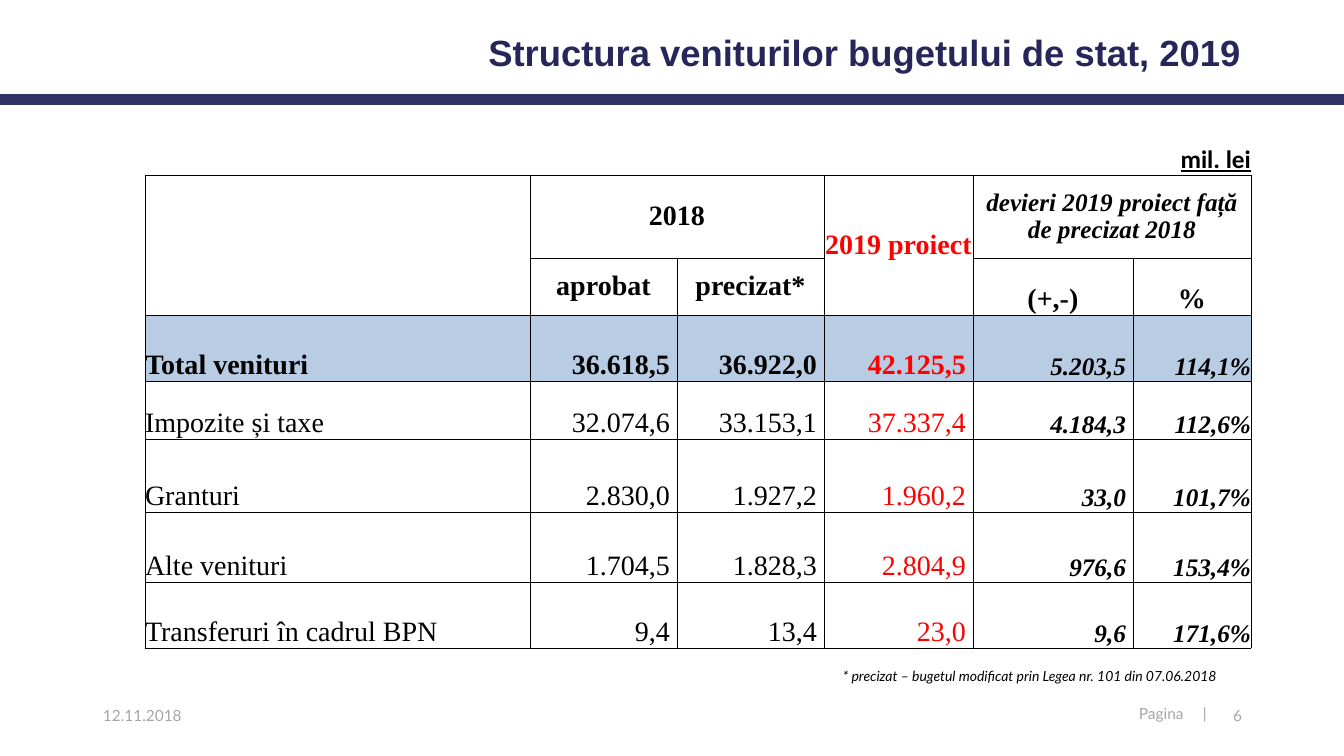
import pptx
import pptx.util
import pptx.dml.color
import pptx.enum.text
import pptx.enum.shapes
import pptx.oxml.ns
from lxml import etree

RGBColor = pptx.dml.color.RGBColor
ALIGN = pptx.enum.text.PP_ALIGN
ANCHOR = pptx.enum.text.MSO_ANCHOR

NAVY = RGBColor(0x33, 0x33, 0x66)
TITLE = RGBColor(0x26, 0x26, 0x5A)
GRAY = RGBColor(0xA6, 0xA6, 0xA6)
BLACK = RGBColor(0, 0, 0)
RED = RGBColor(0xFF, 0, 0)
BLUE = RGBColor(0xB8, 0xCC, 0xE4)

SCALE = 914400 / 100.8
COLS = [385, 147, 147, 149, 160, 118]
ROWS = [40, 83, 57, 66, 58, 73, 70, 66]
SERIF = {"name": "Times New Roman", "size": 20, "color": BLACK}
HEAD = SERIF | {"bold": True}
DEVIATION = HEAD | {"size": 18, "italic": True}
FOOTER = {"name": "Lato", "size": 11, "color": GRAY}

HEADERS = [
    (0, 5, "mil. lei", HEAD | {"name": "Calibri", "size": 18, "underline": True},
     ALIGN.RIGHT, ANCHOR.BOTTOM),
    (1, 1, "2018", HEAD, ALIGN.CENTER, ANCHOR.MIDDLE),
    (1, 3, "2019 proiect", HEAD | {"color": RED}, ALIGN.CENTER, ANCHOR.MIDDLE),
    (1, 4, "devieri 2019 proiect față de precizat 2018", DEVIATION,
     ALIGN.CENTER, ANCHOR.MIDDLE),
    (2, 1, "aprobat", HEAD, ALIGN.CENTER, ANCHOR.MIDDLE),
    (2, 2, "precizat*", HEAD, ALIGN.CENTER, ANCHOR.MIDDLE),
    (2, 4, "(+,-)", HEAD, ALIGN.CENTER, ANCHOR.BOTTOM),
    (2, 5, "%", HEAD, ALIGN.CENTER, ANCHOR.BOTTOM),
]
REVENUES = [
    ("Total venituri", "36.618,5", "36.922,0", "42.125,5", "5.203,5", "114,1%"),
    ("Impozite și taxe", "32.074,6", "33.153,1", "37.337,4", "4.184,3", "112,6%"),
    ("Granturi", "2.830,0", "1.927,2", "1.960,2", "33,0", "101,7%"),
    ("Alte venituri", "1.704,5", "1.828,3", "2.804,9", "976,6", "153,4%"),
    ("Transferuri în cadrul BPN", "9,4", "13,4", "23,0", "9,6", "171,6%"),
]


def px(n):
    return pptx.util.Emu(round(n * SCALE))


def write(p, text, fmt, align=ALIGN.LEFT):
    p.alignment = align
    r = p.add_run()
    r.text = text
    for key, value in fmt.items():
        if key == "color":
            r.font.color.rgb = value
        elif key == "size":
            r.font.size = pptx.util.Pt(value)
        else:
            setattr(r.font, key, value)


def add_text(s, box, text, fmt, align=ALIGN.LEFT):
    tf = s.shapes.add_textbox(*map(px, box)).text_frame
    tf.word_wrap = True
    write(tf.paragraphs[0], text, fmt, align)
    return tf


def add_header(s, left, top, width, height):
    bar = s.shapes.add_shape(pptx.enum.shapes.MSO_SHAPE.RECTANGLE,
                             px(left), px(top + height - 11), px(width), px(11))
    bar.shadow.inherit = False
    bar.fill.solid()
    bar.fill.fore_color.rgb = NAVY
    bar.line.fill.background()
    sp = s.shapes.title
    sp.left, sp.top, sp.width, sp.height = map(px, (left + 395, top + 29, 857, 51))
    tf = sp.text_frame
    tf.word_wrap = True
    tf.auto_size = pptx.enum.text.MSO_AUTO_SIZE.NONE
    tf.vertical_anchor = ANCHOR.MIDDLE
    p = tf.paragraphs[0]
    p.line_spacing = 0.9
    write(p, "Structura veniturilor bugetului de stat, 2019",
          {"name": "Arial", "size": 26, "bold": True, "color": TITLE}, ALIGN.RIGHT)


def add_borders(cell, sides):
    tc_pr = cell._tc.get_or_add_tcPr()
    qn = pptx.oxml.ns.qn
    for side in "LRTB":
        ln = etree.SubElement(tc_pr, qn(f"a:ln{side}"), w="6350")
        if side in sides:
            fill = etree.SubElement(ln, qn("a:solidFill"))
            etree.SubElement(fill, qn("a:srgbClr"), val=str(BLACK))
        else:
            etree.SubElement(ln, qn("a:noFill"))


def fill_cell(cell, text, fmt, align, anchor, right=0):
    cell.vertical_anchor = anchor
    cell.margin_right = px(right)
    write(cell.text_frame.paragraphs[0], text, fmt, align)


def add_revenue_table(s, left, top):
    frame = s.shapes.add_table(len(ROWS), len(COLS), px(left), px(top),
                               px(sum(COLS)), px(sum(ROWS)))
    table = frame.table
    table.first_row = table.horz_banding = False
    for col, width in zip(table.columns, COLS):
        col.width = px(width)
    for i, (row, height) in enumerate(zip(table.rows, ROWS)):
        row.height = px(height)
        for cell in row.cells:
            for side in ("left", "right", "top", "bottom"):
                setattr(cell, f"margin_{side}", 0)
            add_borders(cell, "LRTB" if i else "B")
            if i == 3:
                cell.fill.solid()
                cell.fill.fore_color.rgb = BLUE
            else:
                cell.fill.background()
    for first, last in (((1, 0), (2, 0)), ((1, 1), (1, 2)),
                        ((1, 3), (2, 3)), ((1, 4), (1, 5))):
        table.cell(*first).merge(table.cell(*last))
    for i, j, *content in HEADERS:
        fill_cell(table.cell(i, j), *content)
    for i, values in enumerate(REVENUES, 3):
        amount = HEAD if i == 3 else SERIF
        formats = [amount] * 3 + [amount | {"color": RED}] + [DEVIATION] * 2
        for j, (text, fmt) in enumerate(zip(values, formats)):
            fill_cell(table.cell(i, j), text, fmt, ALIGN.RIGHT if j else ALIGN.LEFT,
                      ANCHOR.BOTTOM, 7 if 0 < j < 5 else 0)


def add_footer(s, left, top):
    add_text(s, (left + 740, top - 38, 455, 27),
             "* precizat – bugetul modificat prin Legea nr. 101 din 07.06.2018",
             {"name": "Lato", "size": 10, "italic": True, "color": BLACK})
    add_text(s, (left, top, 302, 40), "12.11.2018", FOOTER)
    tf = add_text(s, (left + 1030, top, 100, 29), "Pagina\t|", FOOTER)
    tf.margin_left = px(16)
    p = tf.paragraphs[0]
    p.line_spacing = 0.9
    qn = pptx.oxml.ns.qn
    tabs = etree.SubElement(p._p.get_or_add_pPr(), qn("a:tabLst"))
    etree.SubElement(tabs, qn("a:tab"), pos=str(px(64)), algn="l")
    add_text(s, (left + 1118, top, 41, 40), "6", FOOTER, ALIGN.RIGHT)


def main():
    prs = pptx.Presentation()
    prs.slide_width, prs.slide_height = px(1344), px(756)
    s = prs.slides.add_slide(prs.slide_layouts[5])
    add_header(s, 0, 0, 1344, 105)
    add_revenue_table(s, 145, 135)
    add_footer(s, 93, 701)
    prs.save("out.pptx")


if __name__ == "__main__":
    main()
